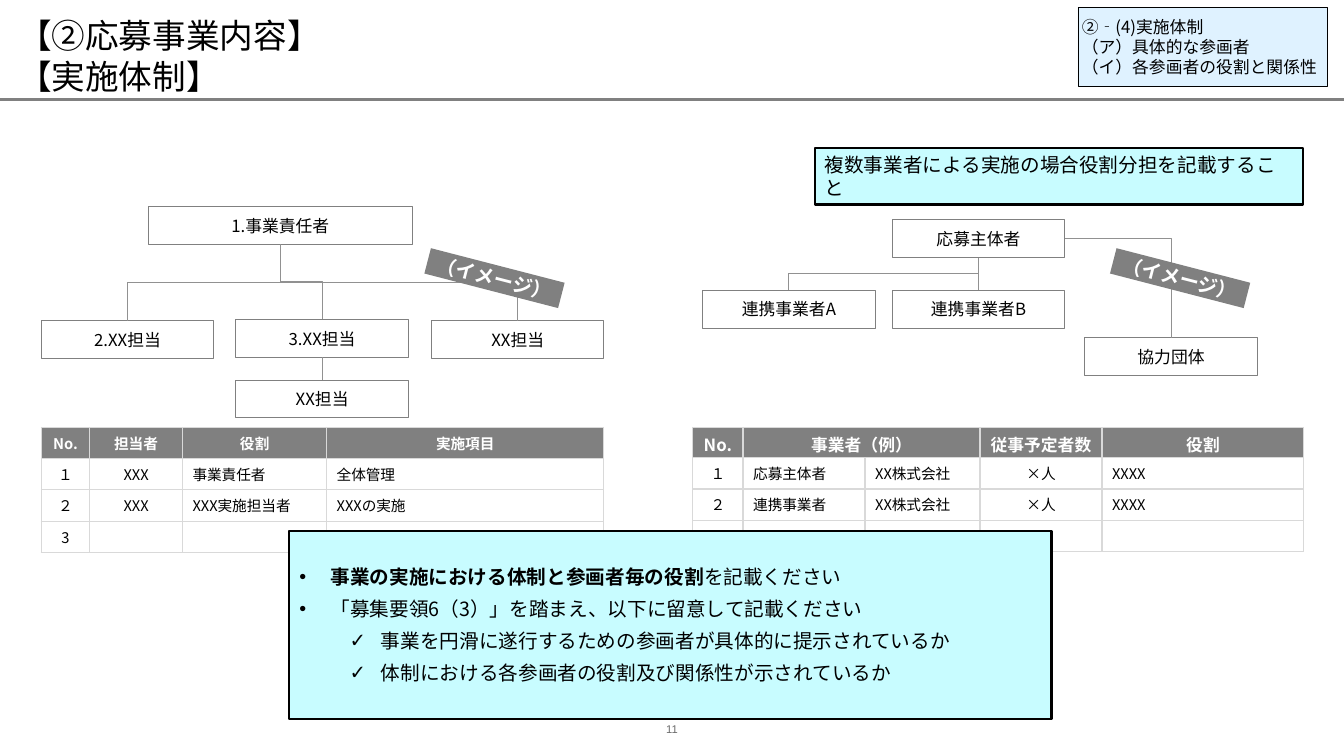
from lxml.etree import SubElement
from pptx import Presentation
from pptx.dml.color import RGBColor
from pptx.enum.shapes import MSO_CONNECTOR, MSO_SHAPE
from pptx.enum.text import MSO_ANCHOR, PP_ALIGN
from pptx.oxml.ns import qn
from pptx.util import Inches, Pt

FONT = "Noto Sans CJK JP"
BLACK, WHITE, GREY, RULE = "000000", "FFFFFF", "808080", "919191"
CYAN, PALE_BLUE, CELL_LINE, FOOTER = "C8FCFF", "DFF2FF", "D9D9D9", "6B6B6B"
LEFT, CENTER = PP_ALIGN.LEFT, PP_ALIGN.CENTER
TOP, SIDE_LEFT, BOTTOM, SIDE_RIGHT = range(4)
BOX_WIDTH, BOX_HEIGHT = 17.1, 3.75


def color(value):
    return RGBColor.from_string(value)


def assign(target, values):
    for name, value in values.items():
        setattr(target, name, value)


class SlideBuilder:
    CELL = Inches(0.1)

    def __init__(self, deck):
        self.page = deck.slides.add_slide(deck.slide_layouts[6])
        self.shapes = self.page.shapes

    def grid(self, *cells):
        return [round(cell * self.CELL) for cell in cells]

    def fill_para(self, para, spans, size=12, ink=BLACK, bold=False, align=LEFT, font=FONT):
        para.alignment = align
        for words, heavy in [(spans, bold)] if isinstance(spans, str) else spans:
            span = para.add_run()
            span.text = words
            assign(span.font, {"size": Pt(size), "bold": heavy, "name": font})
            span.font.color.rgb = color(ink)
            SubElement(span._r.get_or_add_rPr(), qn("a:ea"), typeface=font)

    def frame(self, shape, lines, inset=None, anchor=MSO_ANCHOR.MIDDLE, gap=0, bullets=(), **style):
        frame = shape.text_frame
        assign(frame, {"word_wrap": True, "vertical_anchor": anchor})
        if inset is not None:
            sides = ("left", "right", "top", "bottom")
            assign(frame, {f"margin_{side}": Inches(inset) for side in sides})
        for index, line in enumerate(lines):
            para = frame.add_paragraph() if index else frame.paragraphs[0]
            if bullets:
                self.bullet(para, *bullets[index])
            if index and gap:
                para.space_before = Pt(gap)
            self.fill_para(para, line, **style)

    def bullet(self, para, mark, level):
        para.level = level
        properties = para._p.get_or_add_pPr()
        properties.set("marL", str(Inches(0.31 + 0.5 * level)))
        properties.set("indent", str(Inches(-0.31)))
        SubElement(properties, qn("a:buFont"), typeface="Arial")
        SubElement(properties, qn("a:buChar"), char=mark)

    def text(self, place, lines, **style):
        self.frame(self.shapes.add_textbox(*self.grid(*place)), lines, inset=0, **style)

    def box(self, place, lines, fill=None, line=GREY, weight=0.75, turn=0, **style):
        shape = self.shapes.add_shape(MSO_SHAPE.RECTANGLE, *self.grid(*place))
        shape.shadow.inherit = False
        shape.rotation = turn
        if fill:
            shape.fill.solid()
            shape.fill.fore_color.rgb = color(fill)
        else:
            shape.fill.background()
        if line:
            shape.line.color.rgb = color(line)
            shape.line.width = Pt(weight)
        else:
            shape.line.fill.background()
        self.frame(shape, lines, **style)
        return shape

    def member(self, left, top, name, width=BOX_WIDTH):
        return self.box((left, top, width, BOX_HEIGHT), [name], align=CENTER)

    def stamp(self, left):
        self.box((left, 26.3, 13.7, 2.6), ["（イメージ）"], fill=GREY, line=None,
                 turn=14.5, size=14, ink=WHITE, bold=True, align=CENTER)

    def line(self, kind, ends=(0, 0, 0, 0), ink=RULE, weight=0.75):
        connector = self.shapes.add_connector(kind, *self.grid(*ends))
        connector.line.color.rgb = color(ink)
        connector.line.width = Pt(weight)
        SubElement(connector._element.spPr, qn("a:effectLst"))
        return connector

    def join(self, start, start_side, finish, finish_side, kind=MSO_CONNECTOR.STRAIGHT):
        connector = self.line(kind)
        connector.begin_connect(start, start_side)
        connector.end_connect(finish, finish_side)
        return connector

    def branch(self, parent, child):
        connector = self.join(parent, BOTTOM, child, TOP, MSO_CONNECTOR.ELBOW)
        across = connector.end_x - connector.begin_x
        down = connector.end_y - connector.begin_y
        middle_x = (connector.begin_x + connector.end_x) // 2
        middle_y = (connector.begin_y + connector.end_y) // 2
        assign(connector, {"left": middle_x - down // 2, "top": middle_y - abs(across) // 2,
                           "width": down, "height": abs(across)})
        transform = connector._element.spPr.find(qn("a:xfrm"))
        transform.set("rot", "16200000" if across > 0 else "5400000")
        transform.set("flipH", "1" if across > 0 else "0")

    def corner(self, start, finish):
        connector = self.join(start, SIDE_RIGHT, finish, TOP, MSO_CONNECTOR.ELBOW)
        connector._element.spPr.find(qn("a:prstGeom")).set("prst", "bentConnector2")

    def table(self, left, top, columns, heights, rows, centered, head_size, merge=None):
        place = self.grid(left, top, sum(columns), sum(heights))
        table = self.shapes.add_table(len(rows), len(columns), *place).table
        assign(table, {"first_row": False, "horz_banding": False})
        for column, width in zip(table.columns, self.grid(*columns)):
            column.width = width
        for row, height in zip(table.rows, self.grid(*heights)):
            row.height = height
        for row, words in enumerate(rows):
            for column, word in enumerate(words):
                head = row == 0
                self.cell(table.cell(row, column), word, head, head_size if head else 10.5,
                          CENTER if head or column in centered else LEFT)
        if merge:
            table.cell(0, merge[0]).merge(table.cell(0, merge[1]))

    def cell(self, cell, word, head, size, align):
        cell.vertical_anchor = MSO_ANCHOR.MIDDLE
        if head:
            cell.fill.solid()
            cell.fill.fore_color.rgb = color(GREY)
        else:
            cell.fill.background()
        para = cell.text_frame.paragraphs[0]
        if word:
            self.fill_para(para, word, size, WHITE if head else BLACK, head, align)
        else:
            SubElement(para._p, qn("a:endParaRPr"), sz=str(round(size * 100)))
        properties = cell._tc.get_or_add_tcPr()
        for index, side in enumerate(("lnL", "lnR", "lnT", "lnB")):
            border = SubElement(properties, qn(f"a:{side}"), w=str(Pt(1)))
            fill = SubElement(border, qn("a:solidFill"))
            SubElement(fill, qn("a:srgbClr"), val=CELL_LINE)
            properties.insert(index, border)


def draw_partners(slide):
    slide.table(68.7, 42.4, [5, 12.1, 11.4, 12.1, 20], [2.5, 3.1, 3.1, 3.1], [
        ["No.", "事業者（例）", "", "従事予定者数", "役割"],
        ["１", "応募主体者", "XX株式会社", "×人", "XXXX"],
        ["２", "連携事業者", "XX株式会社", "×人", "XXXX"],
        ["", "", "", "", ""],
    ], centered=(0, 3), head_size=12, merge=(1, 2))
    applicant = slide.member(88.5, 21.8, "応募主体者")
    partner_b = slide.member(88.5, 28.8, "連携事業者B")
    partner_a = slide.member(69.7, 28.8, "連携事業者A")
    supporter = slide.member(107.6, 33.5, "協力団体")
    slide.join(applicant, BOTTOM, partner_b, TOP)
    slide.branch(applicant, partner_a)
    slide.corner(applicant, supporter)
    slide.box((80.8, 14.7, 48.4, 5.6), ["複数事業者による実施の場合役割分担を記載すること"],
              fill=CYAN, line=BLACK, weight=1.5, size=14)


def draw_team(slide):
    slide.table(4.1, 42.4, [4.8, 9.2, 14.3, 27.5], [3.1] * 4, [
        ["No.", "担当者", "役割", "実施項目"],
        ["１", "XXX", "事業責任者", "全体管理"],
        ["２", "XXX", "XXX実施担当者", "XXXの実施"],
        ["3", "", "", ""],
    ], centered=(0, 1), head_size=10.5)
    leader = slide.member(14.7, 20.5, "1.事業責任者", width=26.2)
    staff = [slide.member(left, top, name) for left, top, name in (
        (4.1, 31.8, "2.XX担当"), (23.4, 31.7, "3.XX担当"), (42.8, 31.8, "XX担当"))]
    for person in staff:
        slide.branch(leader, person)
    assistant = slide.member(23.4, 37.7, "XX担当")
    slide.join(staff[1], BOTTOM, assistant, TOP)


def main():
    deck = Presentation()
    assign(deck, {"slide_width": Inches(13.33), "slide_height": Inches(7.5)})
    slide = SlideBuilder(deck)
    slide.text((65, 71.8, 3.3, 1), ["11"], size=8, ink=FOOTER, align=CENTER, font="Arial")
    slide.line(MSO_CONNECTOR.STRAIGHT, (0, 9.9, 133.3, 9.9), ink=GREY, weight=2.25)
    slide.text((1.8, 0, 131.5, 9.5), ["【②応募事業内容】", "【実施体制】"], size=24,
               anchor=MSO_ANCHOR.BOTTOM)
    draw_partners(slide)
    draw_team(slide)
    slide.box((28.7, 52.7, 75.6, 18.6), [
        [("事業の実施における体制と参画者毎の役割", True), ("を記載ください", False)],
        "「募集要領6（3）」を踏まえ、以下に留意して記載ください",
        "事業を円滑に遂行するための参画者が具体的に提示されているか",
        "体制における各参画者の役割及び関係性が示されているか",
    ], fill=CYAN, line=BLACK, weight=1.5, size=14, gap=6,
        bullets=[("•", 0), ("•", 0), ("✓", 1), ("✓", 1)])
    for left in (42.2, 110.2):
        slide.stamp(left)
    slide.box((106.9, 0.7, 24.7, 7.9),
              ["②‐(4)実施体制", "（ア）具体的な参画者", "（イ）各参画者の役割と関係性"],
              fill=PALE_BLUE, line=BLACK, weight=0.25, inset=0.04)
    deck.save("out.pptx")


if __name__ == "__main__":
    main()
